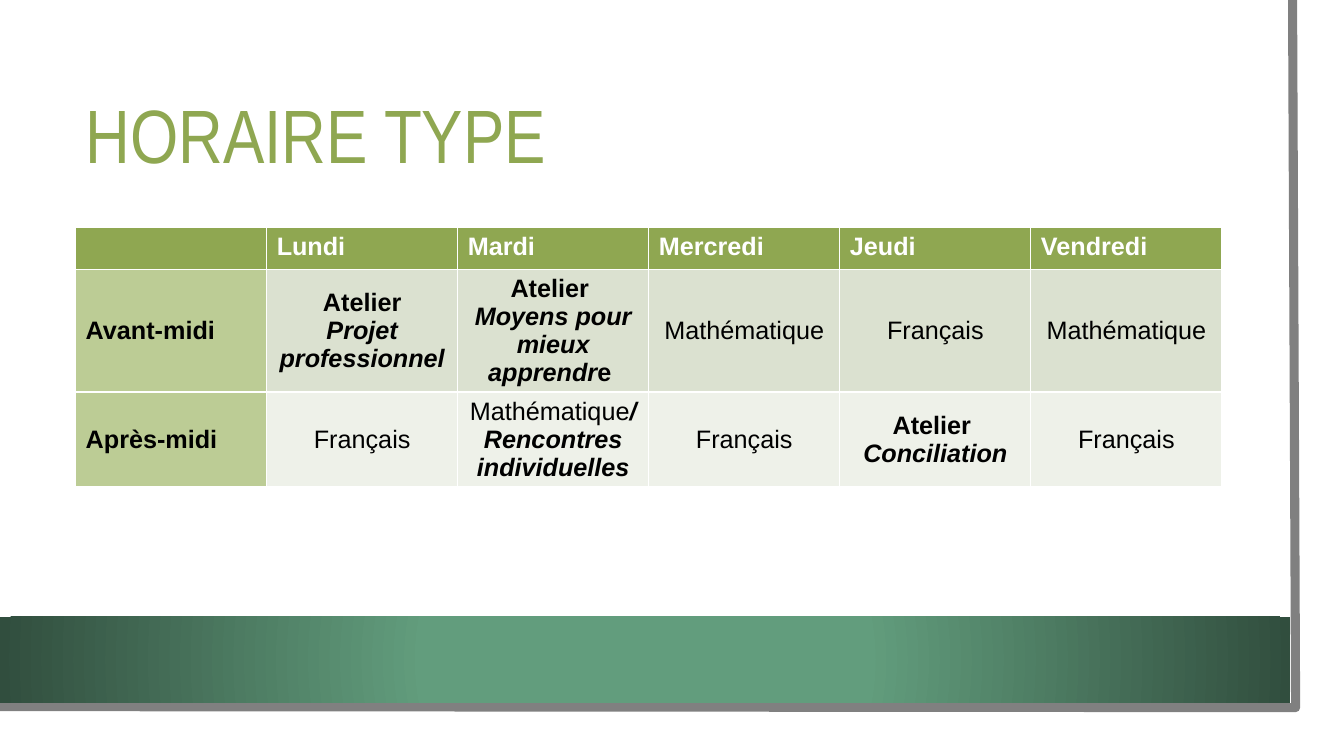
from lxml.etree import SubElement
from pptx import Presentation
from pptx.dml.color import RGBColor
from pptx.enum.shapes import MSO_SHAPE
from pptx.enum.text import MSO_ANCHOR, PP_ALIGN
from pptx.oxml.ns import qn
from pptx.util import Inches, Pt

COLORS = {
    "green": "8FA751",
    "day_part": "BCCC95",
    "morning": "DBE1D0",
    "afternoon": "EEF1E9",
    "frame": "808080",
    "band_center": "629D7D",
    "band_edge": "314E3E",
    "white": "FFFFFF",
    "black": "000000",
}


def color(name):
    return RGBColor.from_string(COLORS[name])


deck = Presentation()
deck.slide_width, deck.slide_height = Inches(13.33), Inches(7.5)
page = deck.slides.add_slide(deck.slide_layouts[5])

# Grey frame along the right and bottom edges
outline = page.shapes.build_freeform(Inches(12.82), Inches(0))
outline.add_line_segments(
    [(Inches(12.85), Inches(7.02)), (Inches(-0.03), Inches(7.01))], close=False
)
frame = outline.convert_to_shape()
frame.shadow.inherit = False
frame.fill.background()
frame.line.color.rgb = color("frame")
frame.line.width = Pt(6.5)

# Green band with a radial gradient
band = page.shapes.add_shape(
    MSO_SHAPE.RECTANGLE, Inches(0), Inches(6.12), Inches(12.8), Inches(0.85)
)
band.shadow.inherit = False
band.line.fill.background()
band.fill.gradient()
stops = zip(band.fill.gradient_stops, [("band_center", 0.34), ("band_edge", 1)])
for stop, (name, position) in stops:
    stop.color.rgb = color(name)
    stop.position = position
gradient = band.element.spPr.find(qn("a:gradFill"))
gradient.remove(gradient.find(qn("a:lin")))
radial = SubElement(gradient, qn("a:path"), {"path": "circle"})
SubElement(radial, qn("a:fillToRect"), dict.fromkeys("ltrb", "50000"))

title = page.shapes.title
title.left, title.top = Inches(0.75), Inches(0.75)
title.width, title.height = Inches(11.37), Inches(1.26)
title.text_frame.text = "HORAIRE TYPE"
title.text_frame.vertical_anchor = MSO_ANCHOR.MIDDLE
para = title.text_frame.paragraphs[0]
para.alignment = PP_ALIGN.LEFT
para.line_spacing = 0.9
para.font.name = "Arial Narrow"
para.font.size = Pt(54)
para.font.color.rgb = color("green")

# Each cell is a list of paragraphs, each paragraph a list of (text, style):
# "b" is bold, "i" is italic
days = ["Lundi", "Mardi", "Mercredi", "Jeudi", "Vendredi"]
math_class = [[("Mathématique", "")]]
french_class = [[("Français", "")]]
schedule = [
    [[]] + [[[(day, "b")]] for day in days],
    [
        [[("Avant-midi", "b")]],
        [[("Atelier", "b")], [("Projet professionnel", "bi")]],
        [[("Atelier ", "b")], [("Moyens pour mieux apprendr", "bi"), ("e ", "b")]],
        math_class,
        french_class,
        math_class,
    ],
    [
        [[("Après-midi", "b")]],
        french_class,
        [[("Mathématique", ""), ("/ Rencontres individuelles", "bi")]],
        french_class,
        [[("Atelier ", "b")], [("Conciliation", "bi")]],
        french_class,
    ],
]
row_fills = ["green", "morning", "afternoon"]
row_heights = [0.41, 1.22, 0.94]

table = page.shapes.add_table(
    len(schedule), len(schedule[0]),
    Inches(0.75), Inches(2.26), Inches(11.37), Inches(sum(row_heights)),
).table
for row, height in zip(table.rows, row_heights):
    row.height = Inches(height)

for row_index, cells in enumerate(schedule):
    is_header = row_index == 0
    for column_index, paragraphs in enumerate(cells):
        is_day_part = column_index == 0 and not is_header
        cell = table.cell(row_index, column_index)
        cell.fill.solid()
        cell.fill.fore_color.rgb = color("day_part" if is_day_part else row_fills[row_index])
        cell.vertical_anchor = MSO_ANCHOR.TOP if is_header else MSO_ANCHOR.MIDDLE
        for index, pieces in enumerate(paragraphs):
            frame_text = cell.text_frame
            para = frame_text.add_paragraph() if index else frame_text.paragraphs[0]
            centered = not is_header and not is_day_part
            para.alignment = PP_ALIGN.CENTER if centered else PP_ALIGN.LEFT
            for text, style in pieces:
                span = para.add_run()
                span.text = text
                span.font.name = "Arial"
                span.font.size = Pt(18)
                span.font.bold = "b" in style
                span.font.italic = "i" in style
                span.font.color.rgb = color("white" if is_header else "black")

deck.save("out.pptx")
